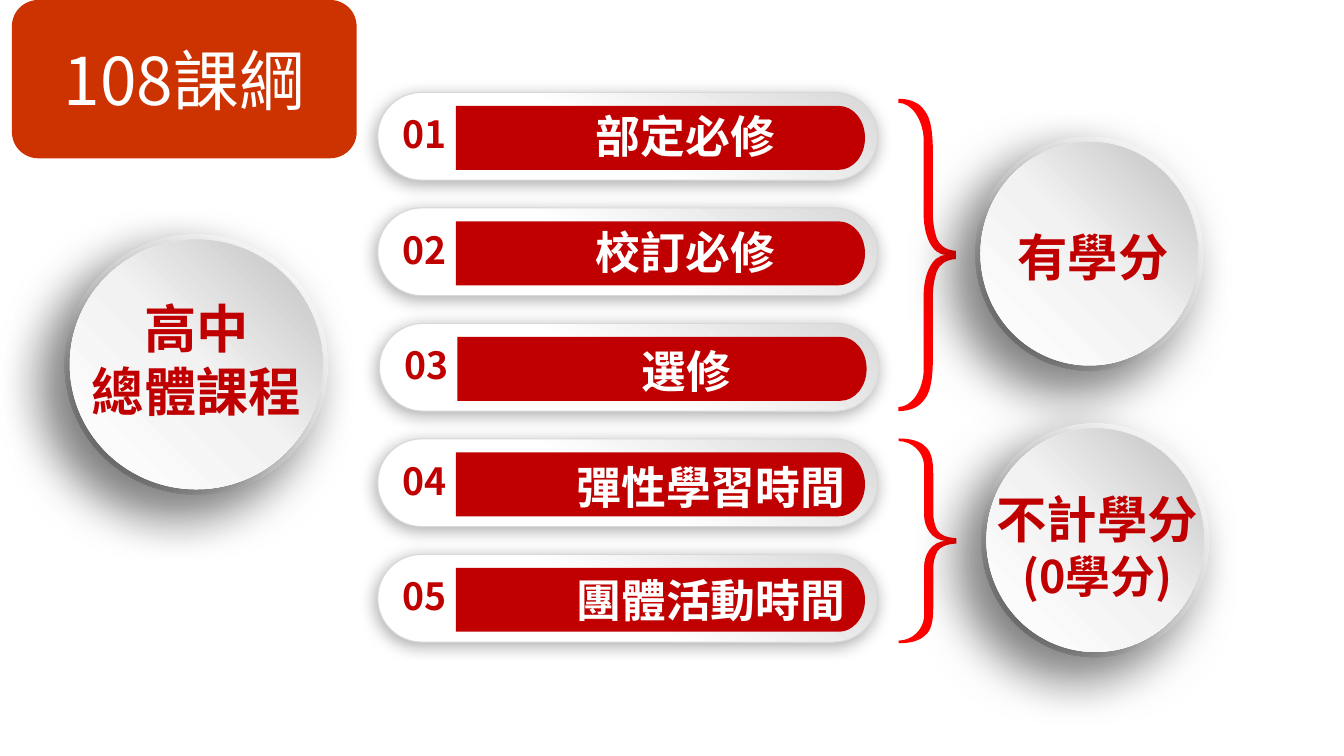
from lxml.etree import SubElement
from pptx import Presentation
from pptx.dml.color import RGBColor
from pptx.enum.shapes import MSO_SHAPE as Preset
from pptx.enum.text import MSO_ANCHOR as Anchor, MSO_AUTO_SIZE as AutoSize, PP_ALIGN as Align
from pptx.oxml.ns import qn
from pptx.util import Cm, Pt

SANS_TC = "Noto Sans CJK TC"
SANS_SC = "Noto Sans CJK SC"
RED, WHITE, ORANGE, BRACE_RED = "C00000", "FFFFFF", "CC3300", "FF0000"

HEADING = "108課綱"
COURSES = [
    ("01", "部定必修", 0, 17.28, 0.28),
    ("02", "校訂必修", 0, 17.28, 0.29),
    ("03", "選修", 0.04, 17.3, 0.38),
    ("04", "彈性學習時間", 0, 17.92, 0.39),
    ("05", "團體活動時間", 0, 17.92, 0.33),
]
CIRCLES = [
    ((1.63, 5.91, 6.63, 6.55), (2.31, 7.47, 5.28, 3.2), [("高中", 37.3), ("總體課程", 37.3)]),
    ((24.58, 3.45, 5.74, 5.89), (25.25, 5.71, 4.6, 1.55), [("有學分", 36)]),
    ((24.73, 10.67, 5.74, 5.89), (24.82, 12.31, 5.66, 2.9), [("不計學分", 36), ("(0學分)", 32)]),
]
BRACES = [(22.64, 2.49, 7.87), (22.65, 11.05, 5.16)]
BRACE_WIDTH = 1.45

OUTER_EDGE = [
    [(0, 0), (0.21, 0), (0.37, 0.013), (0.46, 0.039)],
    [(0.46, 0.039), (0.56, 0.061), (0.6, 0.106), (0.6, 0.171)],
    [(0.6, 0.365), (0.6, 0.4), (0.63, 0.425), (0.67, 0.448)],
    [(0.67, 0.448), (0.72, 0.47), (0.82, 0.484), (1, 0.487)],
]
INNER_EDGE = [
    [(0.84, 0.5), (0.56, 0.5), (0.44, 0.429), (0.44, 0.371)],
    [(0.44, 0.126), (0.42, 0.065), (0.23, 0.013), (0, 0.013)],
]
BAR_CORNER = [(0.936, 0), (0.971, 0), (1, 0.22), (1, 0.5)]

PILL_GRADIENT = ([(0, "FFFFFF"), (45, "FFFFFF"), (100, "D8D8D8")], 300)
RING_GRADIENT = ([(0, "FFFFFF"), (55, "F2F2F2"), (100, "A5A5A5")], 135)
DISC_GRADIENT = ([(0, "FFFFFF"), (51, "F2F2F2"), (100, "BFBFBF")], 315)
PILL_SHADOW = (33, 12, 3)
CIRCLE_SHADOW = (49, 35, 20)
PILL = (9.52, 2.33, 12.6, 2.21)
PILL_STEP = 2.91


def color(value):
    return RGBColor.from_string(value)


def paint(shape, fill):
    shape.shadow.inherit = False
    shape.line.fill.background()
    shape.fill.solid()
    shape.fill.fore_color.rgb = color(fill)


def add_gradient_shape(page, preset, area, gradient, shadow):
    shape = page.shapes.add_shape(preset, *map(Cm, area))
    shape.shadow.inherit = False
    shape.line.fill.background()
    stops, angle = gradient
    shape.fill.gradient()
    shape.fill.gradient_angle = 360 - angle
    properties = shape._element.spPr
    stop_list = properties.find(qn("a:gradFill")).find(qn("a:gsLst"))
    for stop in list(stop_list):
        stop_list.remove(stop)
    for position, value in stops:
        stop = SubElement(stop_list, qn("a:gs"), pos=str(position * 1000))
        SubElement(stop, qn("a:srgbClr"), val=value)
    alpha, blur, distance = shadow
    outer = SubElement(
        properties.find(qn("a:effectLst")), qn("a:outerShdw"),
        blurRad=str(Pt(blur)), dist=str(Pt(distance)), dir=str(135 * 60000),
        algn="tr", rotWithShape="0")
    tint = SubElement(outer, qn("a:srgbClr"), val="000000")
    SubElement(tint, qn("a:alpha"), val=str(alpha * 1000))
    return shape


def write(shape, lines, font, fill, bold=True, align=Align.CENTER, margins=(0, 0)):
    frame = shape.text_frame
    frame.word_wrap = True
    frame.auto_size = AutoSize.NONE
    frame.margin_left = frame.margin_right = Cm(margins[0])
    frame.margin_top = frame.margin_bottom = Cm(margins[1])
    frame.text = "\n".join(text for text, size in lines)
    for para, (text, size) in zip(frame.paragraphs, lines):
        para.alignment = align
        for span in para.runs:
            span.font.size = Pt(size)
            span.font.bold = bold
            span.font.color.rgb = color(fill)
            span.font.name = font
            SubElement(span._r.get_or_add_rPr(), qn("a:ea"), typeface=font)


def add_text(page, area, *args, **options):
    box = page.shapes.add_textbox(*map(Cm, area))
    write(box, *args, **options)


def add_curved_outline(page, area, curves, fill):
    left, top, width, height = map(Cm, area)
    builder = page.shapes.build_freeform(left, top)
    builder.add_line_segments(
        [(left + width, top), (left + width, top + height), (left, top + height)], close=True)
    shape = builder.convert_to_shape()
    paint(shape, fill)
    outline = next(shape._element.iter(qn("a:path")))
    for command in list(outline):
        outline.remove(command)

    def add_command(name, points):
        command = SubElement(outline, qn(name))
        for x, y in points:
            SubElement(command, qn("a:pt"), x=str(round(x * width)), y=str(round(y * height)))

    position = None
    for start, *rest in curves:
        if position is None:
            add_command("a:moveTo", [start])
        elif start != position:
            add_command("a:lnTo", [start])
        if rest:
            add_command("a:cubicBezTo", rest)
        position = rest[-1] if rest else start
    SubElement(outline, qn("a:close"))


def mirrored(curves):
    return [[(x, 1 - y) for x, y in reversed(curve)] for curve in reversed(curves)]


def add_brace(page, left, top, height):
    curves = OUTER_EDGE + mirrored(OUTER_EDGE) + mirrored(INNER_EDGE) + INNER_EDGE
    add_curved_outline(page, (left, top, BRACE_WIDTH, height), curves, BRACE_RED)


def add_course(page, index, number, name, shift, center, drop):
    left, top, width, height = PILL
    left += shift
    top += index * PILL_STEP
    pill = add_gradient_shape(
        page, Preset.ROUNDED_RECTANGLE, (left, top, width, height), PILL_GRADIENT, PILL_SHADOW)
    pill.adjustments[0] = 0.5
    pill.line.color.rgb = color("D8D8D8")
    pill.line.width = Pt(0.75)
    bar = [[(0, 0)], BAR_CORNER, *mirrored([BAR_CORNER]), [(0, 1)]]
    add_curved_outline(page, (left + 1.97, top + 0.34, 10.31, 1.61), bar, RED)
    add_text(page, (left + 0.38, top + 0.35, 2.03, 1.4), [(number, 26.7)], SANS_TC, RED,
             align=Align.LEFT, margins=(0.25, 0.13))
    add_text(page, (center - 4.2, top + drop, 8.4, 1.63), [(name, 32)], SANS_TC, WHITE,
             margins=(0.25, 0.13))


def add_circle(page, area, text_area, lines):
    left, top, width, height = area
    inset = 0.13
    ring = add_gradient_shape(page, Preset.DONUT, area, RING_GRADIENT, CIRCLE_SHADOW)
    ring.adjustments[0] = 0.049
    disc = (left + inset, top + inset, width - 2 * inset, height - 2 * inset)
    add_gradient_shape(page, Preset.OVAL, disc, DISC_GRADIENT, CIRCLE_SHADOW)
    add_text(page, text_area, lines, SANS_SC, RED)


def add_heading(page):
    heading = page.shapes.add_shape(
        Preset.ROUNDED_RECTANGLE, *map(Cm, (0.3, 0, 8.69, 3.99)))
    paint(heading, ORANGE)
    write(heading, [(HEADING, 47)], SANS_TC, WHITE, bold=False, margins=(0.25, 0.13))
    heading.text_frame.vertical_anchor = Anchor.MIDDLE


def main():
    deck = Presentation()
    deck.slide_width, deck.slide_height = Cm(33.87), Cm(19.05)
    page = deck.slides.add_slide(deck.slide_layouts[6])
    for index, course in enumerate(COURSES):
        add_course(page, index, *course)
    for brace in BRACES:
        add_brace(page, *brace)
    for circle in CIRCLES:
        add_circle(page, *circle)
    add_heading(page)
    deck.save("out.pptx")


if __name__ == "__main__":
    main()
